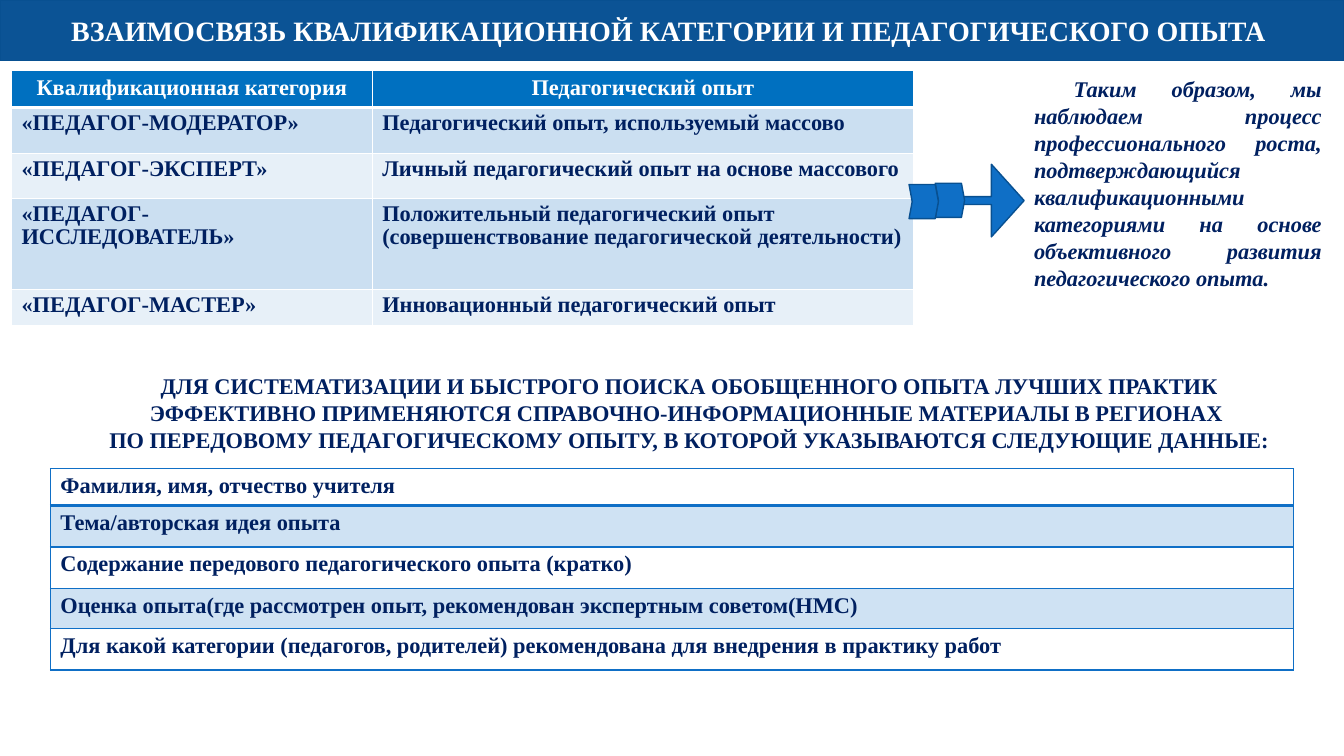
from dataclasses import dataclass

from lxml import etree
from pptx import Presentation
from pptx import util as u
from pptx.dml.color import RGBColor
from pptx.enum import shapes, text
from pptx.oxml import ns


@dataclass(frozen=True)
class Theme:
    """Colours, font and type sizes of the slide."""
    font: str = "Times New Roman"
    title_size: int = 20
    body_size: int = 16
    white: str = "FFFFFF"
    navy: str = "002060"
    banner: str = "0B5395"
    outline: str = "085091"
    accent: str = "0F6FC6"
    header: str = "0070C0"
    bands: tuple = ("CBDFF1", "E7F0F8")


THEME = Theme()
ALIGN = text.PP_ALIGN
SHAPE = shapes.MSO_SHAPE

CATEGORIES = [
    ("Квалификационная категория", "Педагогический опыт"),
    ("«ПЕДАГОГ-МОДЕРАТОР»", "Педагогический опыт, используемый массово"),
    ("«ПЕДАГОГ-ЭКСПЕРТ»", "Личный педагогический опыт на основе массового"),
    ("«ПЕДАГОГ-ИССЛЕДОВАТЕЛЬ»",
     "Положительный педагогический опыт (совершенствование педагогической деятельности)"),
    ("«ПЕДАГОГ-МАСТЕР»", "Инновационный педагогический опыт"),
]
RECORD_FIELDS = [
    ("Фамилия, имя, отчество учителя",),
    ("Тема/авторская идея опыта",),
    ("Содержание передового педагогического опыта (кратко)",),
    ("Оценка опыта(где рассмотрен опыт, рекомендован экспертным советом(НМС)",),
    ("Для какой категории (педагогов, родителей) рекомендована для внедрения в практику работ",),
]
CONCLUSION = ("Таким образом, мы наблюдаем процесс профессионального роста, "
              "подтверждающийся квалификационными категориями на основе "
              "объективного развития педагогического опыта.")
INTRO = [
    "ДЛЯ СИСТЕМАТИЗАЦИИ И БЫСТРОГО ПОИСКА ОБОБЩЕННОГО ОПЫТА ЛУЧШИХ ПРАКТИК "
    "ЭФФЕКТИВНО ПРИМЕНЯЮТСЯ СПРАВОЧНО-ИНФОРМАЦИОННЫЕ МАТЕРИАЛЫ В РЕГИОНАХ ",
    "ПО ПЕРЕДОВОМУ ПЕДАГОГИЧЕСКОМУ ОПЫТУ, В КОТОРОЙ УКАЗЫВАЮТСЯ СЛЕДУЮЩИЕ ДАННЫЕ:",
]


def cm(*lengths):
    """Turn centimetre numbers into lengths."""
    return [u.Cm(length) for length in lengths]


def write(frame, lines, color=THEME.navy, size=THEME.body_size, align=ALIGN.LEFT, italic=False):
    """Write bold lines into a text frame, one paragraph each."""
    frame.word_wrap = True
    frame.text = "\n".join(lines)
    for paragraph in frame.paragraphs:
        paragraph.alignment = align
        font = paragraph.font
        font.name, font.size = THEME.font, u.Pt(size)
        font.bold, font.italic = True, italic
        font.color.rgb = RGBColor.from_string(color)


def add_block(slide, preset, box, fill, adjustments=()):
    """Add an outlined preset shape."""
    block = slide.shapes.add_shape(preset, *cm(*box))
    block.shadow.inherit = False
    block.fill.solid()
    block.fill.fore_color.rgb = RGBColor.from_string(fill)
    block.line.color.rgb = RGBColor.from_string(THEME.outline)
    block.line.width = u.Pt(1)
    for index, value in enumerate(adjustments):
        block.adjustments[index] = value
    return block


def add_note(slide, box, lines, align, italic=False):
    """Add a wrapped text box and return its frame."""
    frame = slide.shapes.add_textbox(*cm(*box)).text_frame
    write(frame, lines, align=align, italic=italic)
    return frame


def fill_cell(cell, color, alpha=None):
    """Fill a cell, or clear it when no colour is given."""
    if color is None:
        cell.fill.background()
        return
    cell.fill.solid()
    cell.fill.fore_color.rgb = RGBColor.from_string(color)
    if alpha:
        tint = cell.fill._xPr.find(".//" + ns.qn("a:srgbClr"))
        etree.SubElement(tint, ns.qn("a:alpha"), val=str(alpha * 1000))


def border_cell(cell, color, top, bottom):
    """Draw the four borders of a cell, with widths in points."""
    properties = cell._tc.get_or_add_tcPr()
    widths = {"a:lnL": 1, "a:lnR": 1, "a:lnT": top, "a:lnB": bottom}
    for index, (side, width) in enumerate(widths.items()):
        border = etree.Element(ns.qn(side), w=str(u.Pt(width)))
        solid = etree.SubElement(border, ns.qn("a:solidFill"))
        etree.SubElement(solid, ns.qn("a:srgbClr"), val=color)
        properties.insert(index, border)


def add_grid(slide, left, top, widths, heights, rows, border, rule, paint):
    """Add a bordered table whose first row is closed by a thicker rule."""
    frame = slide.shapes.add_table(len(rows), len(widths),
                                   *cm(left, top, sum(widths), sum(heights)))
    grid = frame.table
    grid.first_row = grid.horz_banding = False
    for column, width in zip(grid.columns, widths):
        column.width = u.Cm(width)
    for index, (row, height, labels) in enumerate(zip(grid.rows, heights, rows)):
        row.height = u.Cm(height)
        for cell, label in zip(row.cells, labels):
            paint(cell, index, label)
            border_cell(cell, border, rule if index == 1 else 1, rule if index == 0 else 1)


def paint_category(cell, index, label):
    """Style a cell of the category table."""
    if index == 0:
        fill_cell(cell, THEME.header)
        write(cell.text_frame, [label], THEME.white, align=ALIGN.CENTER)
    else:
        fill_cell(cell, THEME.bands[(index - 1) % 2])
        write(cell.text_frame, [label])
        cell.text_frame.paragraphs[0].line_spacing = 0.9


def paint_field(cell, index, label):
    """Style a cell of the record table, tinting every second row."""
    fill_cell(cell, THEME.accent if index % 2 else None, alpha=20)
    write(cell.text_frame, [label])


def add_growth_arrow(slide):
    """Add the arrow with two chevrons for its tail."""
    add_block(slide, SHAPE.NOTCHED_RIGHT_ARROW, (24.16, 4.14, 1.65, 1.83), THEME.accent, (0.108, 0.5))
    for left, top in ((23.57, 4.62), (22.91, 4.65)):
        add_block(slide, SHAPE.CHEVRON, (left, top, 0.74, 0.86), THEME.accent, (0.108,))


def main():
    """Build the slide and save it."""
    deck = Presentation()
    deck.slide_width, deck.slide_height = cm(33.87, 19.05)
    slide = deck.slides.add_slide(deck.slide_layouts[6])

    banner = add_block(slide, SHAPE.RECTANGLE, (0, 0, 33.87, 1.52), THEME.banner)
    banner.text_frame.vertical_anchor = text.MSO_ANCHOR.MIDDLE
    write(banner.text_frame, ["ВЗАИМОСВЯЗЬ КВАЛИФИКАЦИОННОЙ КАТЕГОРИИ И ПЕДАГОГИЧЕСКОГО ОПЫТА "],
          THEME.white, THEME.title_size, ALIGN.CENTER)

    add_grid(slide, 0.29, 1.78, (9.09, 13.64), (0.93, 1.15, 1.15, 2.28, 0.93),
             CATEGORIES, THEME.white, 3, paint_category)
    conclusion = add_note(slide, (25.81, 1.78, 7.75, 5.74), [CONCLUSION], ALIGN.JUSTIFY, italic=True)
    conclusion.paragraphs[0]._p.get_or_add_pPr().set("indent", str(u.Cm(1)))
    add_note(slide, (1.78, 9.25, 31.19, 2.31), INTRO, ALIGN.CENTER)
    add_growth_arrow(slide)
    add_grid(slide, 1.27, 11.81, (31.32,), (0.93, 1.04, 1.04, 1.02, 1.04),
             RECORD_FIELDS, THEME.accent, 2, paint_field)

    deck.save("out.pptx")


if __name__ == "__main__":
    main()
